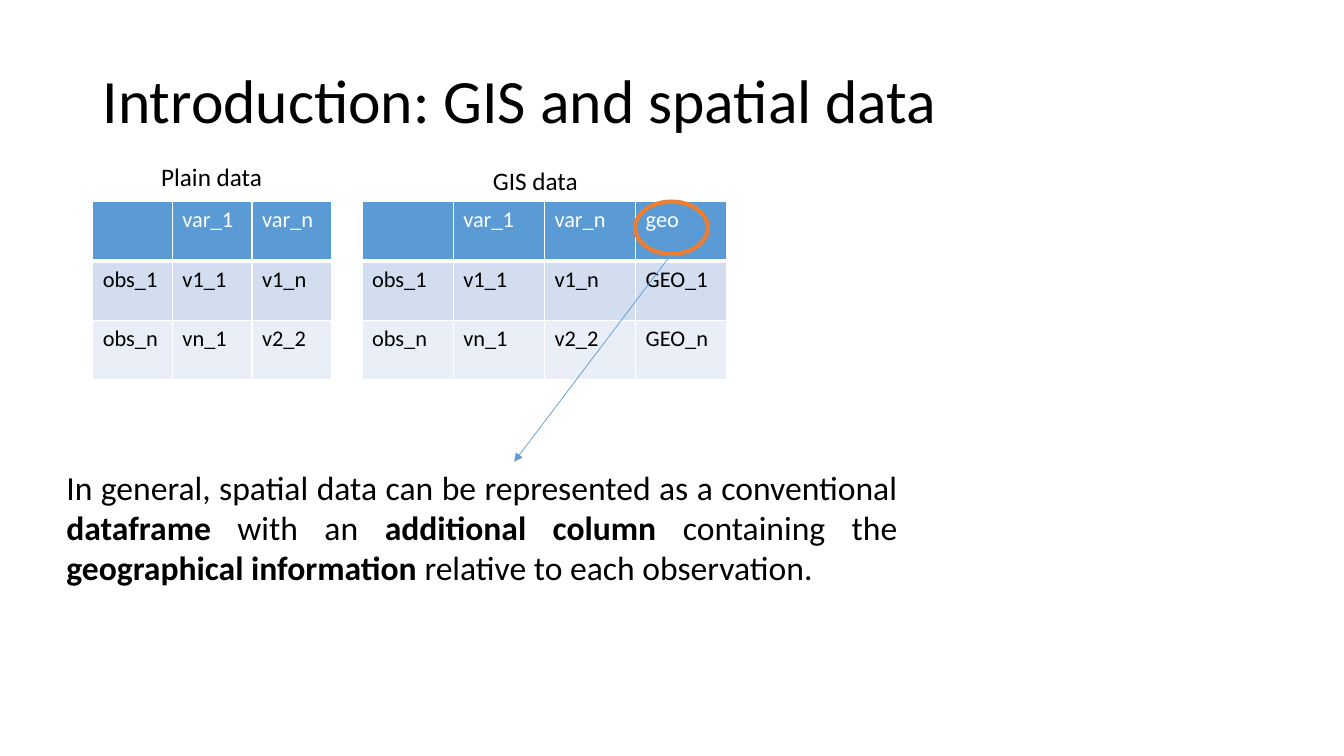
from dataclasses import dataclass

import pptx
import pptx.dml.color
import pptx.enum.shapes
import pptx.enum.text
import pptx.oxml
import pptx.oxml.ns
import pptx.slide
import pptx.table
import pptx.text.text
import pptx.util

Inches = pptx.util.Inches
Pt = pptx.util.Pt
Align = pptx.enum.text.PP_ALIGN
Anchor = pptx.enum.text.MSO_ANCHOR

BLACK, WHITE, BLUE, ORANGE = "000000", "FFFFFF", "5B9BD5", "ED7D31"
ROW_FILLS = (BLUE, "D2DEEF", "EAEFF7")
ROW_HEIGHT = 0.59
TABLE_TOP = 2.0


@dataclass
class Label:
    left: float
    top: float
    width: float
    height: float
    size: float
    spans: list[tuple[str, bool]]
    align: Align = Align.LEFT
    anchor: Anchor = Anchor.TOP
    line_spacing: float = 1.0


@dataclass
class DataTable:
    left: float
    column_width: float
    rows: list[list[str]]


LABELS = [
    Label(0.92, 0.3, 11.5, 1.45, 44, [("Introduction: GIS and spatial data", False)],
          anchor=Anchor.MIDDLE, line_spacing=0.9),
    Label(1.5, 1.55, 2.42, 0.4, 18, [("Plain data", False)]),
    Label(4.79, 1.59, 2.42, 0.4, 18, [("GIS data", False)]),
    Label(0.56, 4.58, 8.44, 1.31, 24, [
        ("In general, spatial data can be represented as a conventional ", False),
        ("dataframe", True),
        (" with an ", False),
        ("additional column ", True),
        ("containing the ", False),
        ("geographical information ", True),
        ("relative to each observation.", False),
    ], align=Align.JUSTIFY),
]

PLAIN_ROWS = [
    ["", "var_1", "var_n"],
    ["obs_1", "v1_1", "v1_n"],
    ["obs_n", "vn_1", "v2_2"],
]
GEO_COLUMN = ["geo", "GEO_1", "GEO_n"]
TABLES = [
    DataTable(0.92, 0.79, PLAIN_ROWS),
    DataTable(3.59, 0.905, [row + [geo] for row, geo in zip(PLAIN_ROWS, GEO_COLUMN)]),
]


def color(code: str) -> pptx.dml.color.RGBColor:
    return pptx.dml.color.RGBColor.from_string(code)


def add_span(para: pptx.text.text._Paragraph, text: str, size: float,
             code: str, bold: bool = False) -> None:
    span = para.add_run()
    span.text = text
    for name, value in {"name": "Calibri", "size": Pt(size), "bold": bold}.items():
        setattr(span.font, name, value)
    span.font.color.rgb = color(code)


def add_label(page: pptx.slide.Slide, label: Label) -> None:
    box = page.shapes.add_textbox(Inches(label.left), Inches(label.top),
                                  Inches(label.width), Inches(label.height))
    frame = box.text_frame
    frame.word_wrap = True
    frame.vertical_anchor = label.anchor
    para = frame.paragraphs[0]
    para.alignment = label.align
    para.line_spacing = label.line_spacing
    for text, bold in label.spans:
        add_span(para, text, label.size, BLACK, bold)


def add_borders(cell: pptx.table._Cell, bottom: float, top: float) -> None:
    """Draw white cell borders; widths are in points."""
    properties = cell._tc.get_or_add_tcPr()
    for side, width in {"L": 1, "R": 1, "T": top, "B": bottom}.items():
        properties.append(pptx.oxml.parse_xml(
            f'<a:ln{side} {pptx.oxml.ns.nsdecls("a")} w="{Pt(width)}">'
            f'<a:solidFill><a:srgbClr val="{WHITE}"/></a:solidFill></a:ln{side}>'))


def add_data_table(page: pptx.slide.Slide, data: DataTable) -> None:
    row_count, column_count = len(data.rows), len(data.rows[0])
    table = page.shapes.add_table(
        row_count, column_count, Inches(data.left), Inches(TABLE_TOP),
        Inches(data.column_width * column_count), Inches(ROW_HEIGHT * row_count)).table
    for column in table.columns:
        column.width = Inches(data.column_width)
    for row_index, texts in enumerate(data.rows):
        table.rows[row_index].height = Inches(ROW_HEIGHT)
        for column_index, text in enumerate(texts):
            cell = table.cell(row_index, column_index)
            add_borders(cell, bottom=3 if row_index == 0 else 1,
                        top=3 if row_index == 1 else 1)
            cell.fill.solid()
            cell.fill.fore_color.rgb = color(ROW_FILLS[row_index])
            if text:
                add_span(cell.text_frame.paragraphs[0], text, 16,
                         WHITE if row_index == 0 else BLACK)


def add_geo_marker(page: pptx.slide.Slide) -> None:
    """Ring the geo heading and point from it to the explanation."""
    ring = page.shapes.add_shape(pptx.enum.shapes.MSO_SHAPE.OVAL, Inches(6.3),
                                 Inches(TABLE_TOP), Inches(0.72), Inches(0.52))
    ring.shadow.inherit = False
    ring.fill.background()
    ring.line.color.rgb = color(ORANGE)
    ring.line.width = Pt(3)

    arrow = page.shapes.add_connector(pptx.enum.shapes.MSO_CONNECTOR.STRAIGHT, Inches(6.66),
                                      Inches(2.52), Inches(5.1), Inches(4.58))
    arrow.line.color.rgb = color(BLUE)
    arrow.line.width = Pt(0.5)
    namespace = pptx.oxml.ns.nsdecls("a")
    arrow.line._get_or_add_ln().append(
        pptx.oxml.parse_xml(f'<a:tailEnd {namespace} type="triangle"/>'))
    arrow._element.spPr.append(pptx.oxml.parse_xml(f"<a:effectLst {namespace}/>"))


def main() -> None:
    deck = pptx.Presentation()
    deck.slide_width, deck.slide_height = Inches(13.33), Inches(7.5)
    page = deck.slides.add_slide(deck.slide_layouts[6])
    for data in TABLES:
        add_data_table(page, data)
    add_geo_marker(page)
    for label in LABELS:
        add_label(page, label)
    deck.save("out.pptx")


if __name__ == "__main__":
    main()
